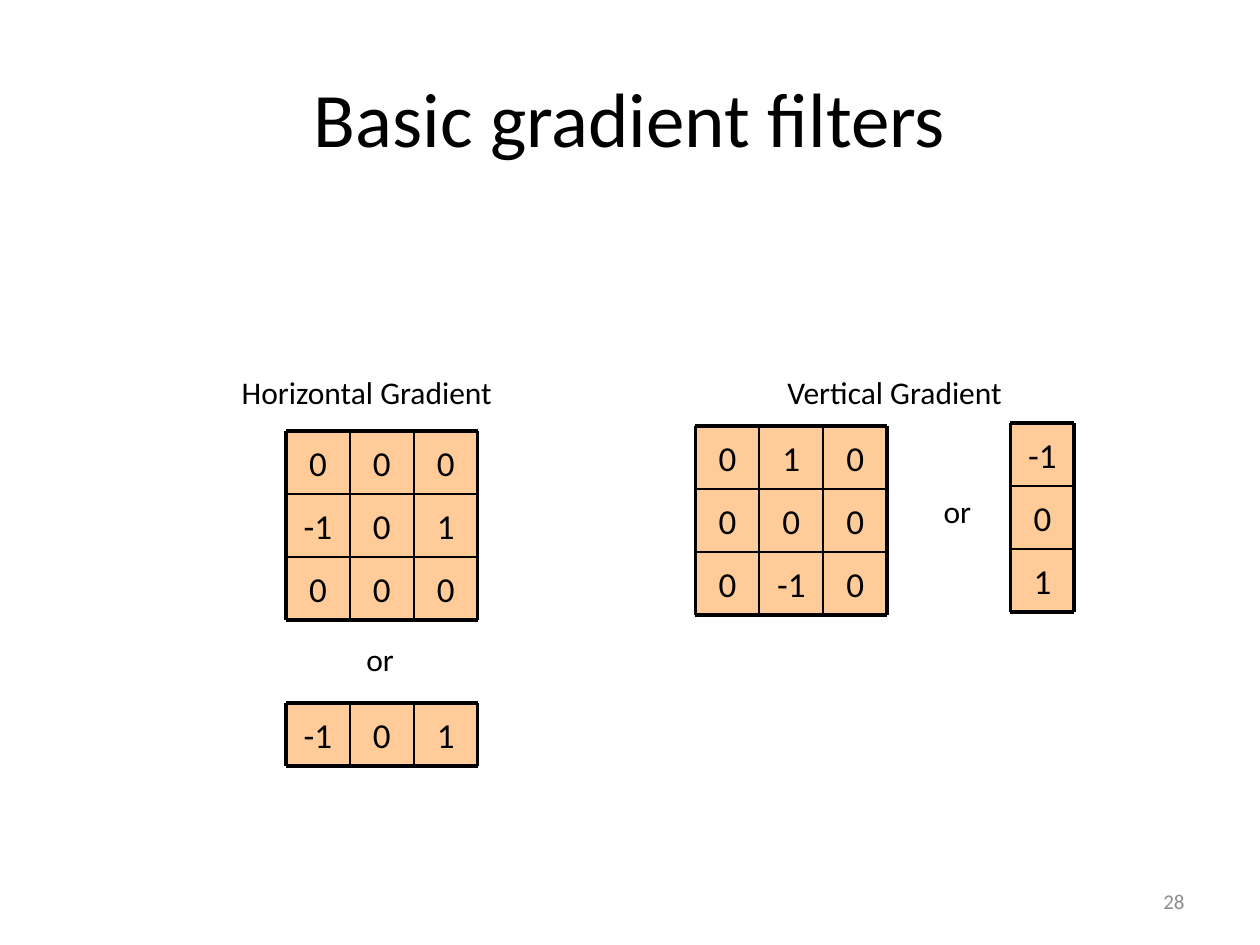
from lxml.etree import SubElement
from pptx import Presentation
from pptx.dml.color import RGBColor
from pptx.enum.shapes import MSO_CONNECTOR, MSO_SHAPE
from pptx.enum.text import MSO_ANCHOR, MSO_AUTO_SIZE, PP_ALIGN
from pptx.oxml.ns import qn
from pptx.util import Inches, Pt


def color(value):
    return RGBColor.from_string(value)


class FilterSlide:
    """Holds the style and the current slide, and draws each kind of element."""

    font = "Calibri"
    ink = "000000"
    muted = "8C8C8C"
    cell_fill = "FFCC99"
    cell_width = 1.52 / 3
    cell_height = 0.5

    def __init__(self, deck):
        self.page = deck.slides.add_slide(deck.slide_layouts[5])

    def set_text(self, frame, text, size, align=PP_ALIGN.LEFT, ink=ink):
        frame.text = text
        para = frame.paragraphs[0]
        para.alignment = align
        span = para.runs[0]
        span.font.name = self.font
        span.font.size = Pt(size)
        span.font.color.rgb = color(ink)
        return para

    def title(self, text):
        box = self.page.shapes.title
        box.left, box.top = Inches(0.5), Inches(0.3)
        box.width, box.height = Inches(9), Inches(1.25)
        box.text_frame.vertical_anchor = MSO_ANCHOR.MIDDLE
        self.set_text(box.text_frame, text, 44, PP_ALIGN.CENTER)

    def label(self, text, left, top, width):
        box = self.page.shapes.add_textbox(
            Inches(left), Inches(top), Inches(width), Inches(0.4))
        frame = box.text_frame
        frame.word_wrap = False
        frame.auto_size = MSO_AUTO_SIZE.SHAPE_TO_FIT_TEXT
        self.set_text(frame, text, 18)

    def page_number(self, text):
        box = self.page.shapes.add_textbox(
            Inches(7.17), Inches(6.95), Inches(2.33), Inches(0.4))
        box.text_frame.word_wrap = True
        box.text_frame.vertical_anchor = MSO_ANCHOR.MIDDLE
        self.set_text(box.text_frame, text, 12, PP_ALIGN.RIGHT, self.muted)

    def cell(self, group, text, left, top):
        box = group.shapes.add_shape(
            MSO_SHAPE.RECTANGLE, Inches(left), Inches(top),
            Inches(self.cell_width), Inches(self.cell_height))
        box.shadow.inherit = False
        box.fill.solid()
        box.fill.fore_color.rgb = color(self.cell_fill)
        box.line.fill.background()
        frame = box.text_frame
        frame.margin_left = frame.margin_right = 0
        frame.margin_top = frame.margin_bottom = 0
        frame.vertical_anchor = MSO_ANCHOR.MIDDLE
        para = self.set_text(frame, text, 20, PP_ALIGN.CENTER)
        para.space_before = Pt(4)

    def rule(self, group, start, end, outer):
        line = group.shapes.add_connector(
            MSO_CONNECTOR.STRAIGHT, *map(Inches, start + end))
        line.line.color.rgb = color(self.ink)
        line.line.width = Pt(2.25 if outer else 1)
        SubElement(line._element.spPr, qn("a:effectLst"))

    def kernel(self, left, top, rows):
        group = self.page.shapes.add_group_shape()
        row_count, column_count = len(rows), len(rows[0])
        xs = [left + i * self.cell_width for i in range(column_count + 1)]
        ys = [top + i * self.cell_height for i in range(row_count + 1)]
        for y, row in zip(ys, rows):
            for x, value in zip(xs, row):
                self.cell(group, str(value), x, y)
        for i, y in enumerate(ys):
            self.rule(group, (xs[0], y), (xs[-1], y), i in (0, row_count))
        for i, x in enumerate(xs):
            self.rule(group, (x, ys[0]), (x, ys[-1]), i in (0, column_count))


def main():
    deck = Presentation()
    deck.slide_width, deck.slide_height = Inches(10), Inches(7.5)
    slide = FilterSlide(deck)
    slide.title("Basic gradient filters")
    slide.kernel(2.27, 3.42, [[0, 0, 0], [-1, 0, 1], [0, 0, 0]])
    slide.kernel(5.52, 3.38, [[0, 1, 0], [0, 0, 0], [0, -1, 0]])
    slide.kernel(2.27, 5.58, [[-1, 0, 1]])
    slide.kernel(8.02, 3.36, [[-1], [0], [1]])
    slide.label("Horizontal Gradient", 1.82, 2.91, 2.38)
    slide.label("Vertical Gradient", 6.15, 2.91, 2.12)
    slide.label("or", 2.81, 5.03, 0.43)
    slide.label("or", 7.39, 3.86, 0.43)
    slide.page_number("28")
    deck.save("out.pptx")


if __name__ == "__main__":
    main()
